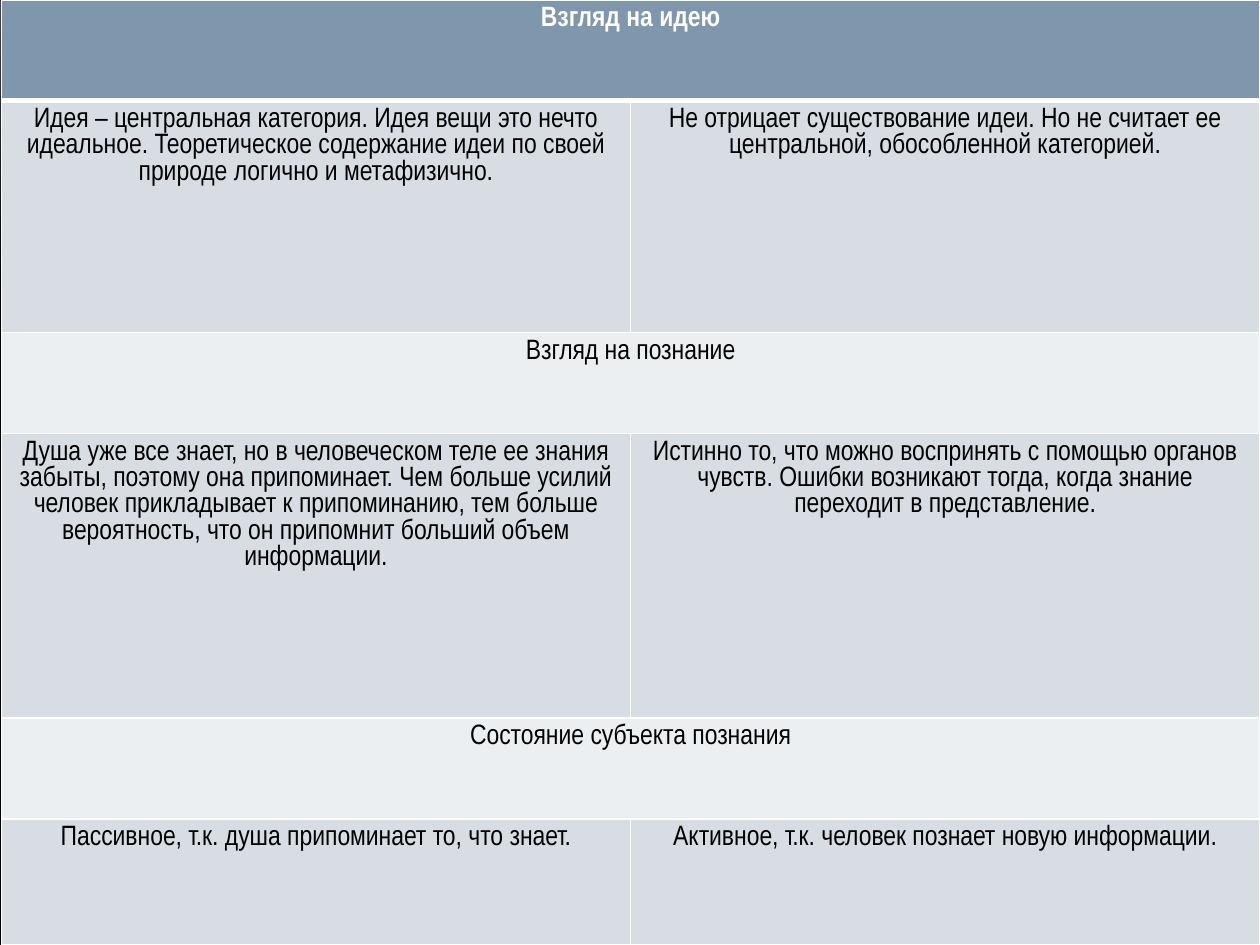
import pptx
import pptx.dml.color
import pptx.enum.text
import pptx.oxml
import pptx.oxml.ns
import pptx.util

Pt = pptx.util.Pt
COLORS = {
    "header": "7E97AD",
    "section": "ECEFF1",
    "comparison": "D8DDE3",
    "border": "FFFFFF",
    "header_text": "FFFFFF",
    "text": "000000",
    "background_top": "3F3F3F",
    "background": "000000",
}
VIEWS = [
    (57.6, ["Взгляд на идею"]),
    (132.5, [
        "Идея – центральная категория. Идея вещи это нечто идеальное. "
        "Теоретическое содержание идеи по своей природе логично и метафизично.",
        "Не отрицает существование идеи. Но не считает ее центральной, "
        "обособленной категорией.",
    ]),
    (57.6, ["Взгляд на познание"]),
    (162.7, [
        "Душа уже все знает, но в человеческом теле ее знания забыты, поэтому "
        "она припоминает. Чем больше усилий человек прикладывает к припоминанию, "
        "тем больше вероятность, что он припомнит больший объем информации.",
        "Истинно то, что можно воспринять с помощью органов чувств. Ошибки "
        "возникают тогда, когда знание переходит в представление.",
    ]),
    (57.6, ["Состояние субъекта познания"]),
    (72, [
        "Пассивное, т.к. душа припоминает то, что знает.",
        "Активное, т.к. человек познает новую информации.",
    ]),
]


def rgb(name):
    """Return the named colour."""
    return pptx.dml.color.RGBColor.from_string(COLORS[name])


def write_text(frame, text, color="text", size=16, bold=False, font="Arial Narrow"):
    """Write one centred paragraph into a text frame."""
    paragraph = frame.paragraphs[0]
    paragraph.alignment = pptx.enum.text.PP_ALIGN.CENTER
    run = paragraph.add_run()
    run.text = text
    run.font.name = font
    run.font.size = Pt(size)
    run.font.bold = bold
    run.font.color.rgb = rgb(color)


def style_cell(cell, fill, top=1, bottom=1):
    """Give a cell its border lines and fill."""
    properties = cell._tc.get_or_add_tcPr()
    for side, width in (("L", 1), ("R", 1), ("T", top), ("B", bottom)):
        properties.append(pptx.oxml.parse_xml(
            f'<a:ln{side} {pptx.oxml.ns.nsdecls("a")} w="{Pt(width)}"><a:solidFill>'
            f'<a:srgbClr val="{COLORS["border"]}"/></a:solidFill></a:ln{side}>'
        ))
    cell.fill.solid()
    cell.fill.fore_color.rgb = rgb(fill)


def add_views_table(slide, left, top, width, height):
    """Place the comparison table, with section rows merged across."""
    table = slide.shapes.add_table(
        len(VIEWS), 2, Pt(left), Pt(top), Pt(width), Pt(height)
    ).table
    for column in table.columns:
        column.width = Pt(width / 2)
    for index, (row_height, views) in enumerate(VIEWS):
        row = table.rows[index]
        row.height = Pt(row_height)
        is_header = index == 0
        is_section = len(views) == 1
        fill = "header" if is_header else "section" if is_section else "comparison"
        for cell in row.cells:
            style_cell(cell, fill, top=3 if index == 1 else 1,
                       bottom=3 if is_header else 1)
        if is_section:
            row.cells[0].merge(row.cells[1])
        for cell, view in zip(row.cells, views):
            write_text(cell.text_frame, view, bold=is_header,
                       color="header_text" if is_header else "text")


def paint_background(slide):
    """Fill the slide with a dark vertical gradient."""
    fill = slide.background.fill
    fill.gradient()
    fill.gradient_angle = 270
    stops = (("background_top", 0), ("background", 0.31))
    for stop, (color, position) in zip(fill.gradient_stops, stops):
        stop.color.rgb = rgb(color)
        stop.position = position


def main():
    """Build and save the presentation."""
    deck = pptx.Presentation()
    deck.slide_width, deck.slide_height = Pt(720), Pt(540)
    slide = deck.slides.add_slide(deck.slide_layouts[6])
    paint_background(slide)
    add_views_table(slide, left=0.8, top=0, width=719.2, height=540)
    deck.save("out.pptx")


if __name__ == "__main__":
    main()
